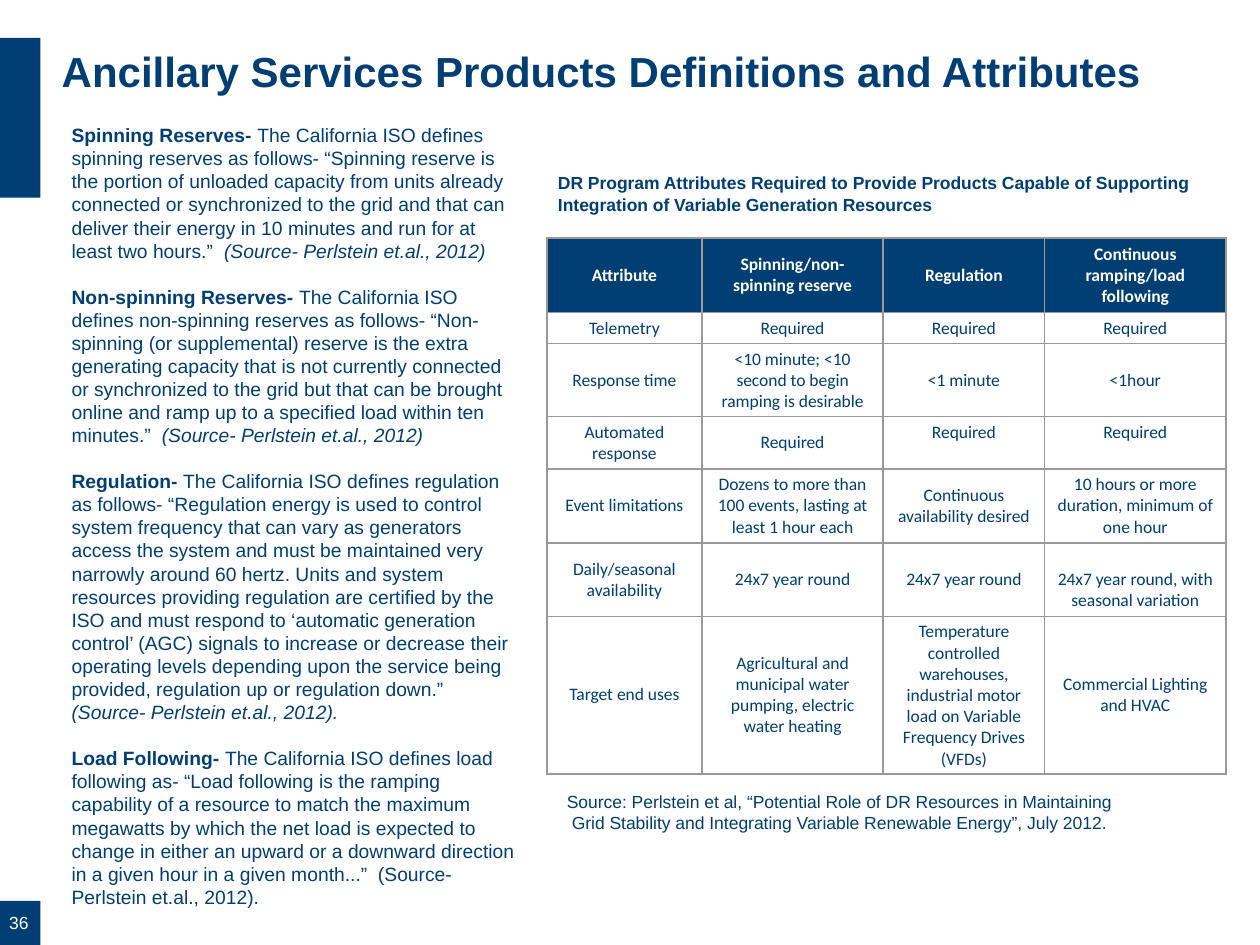
from dataclasses import dataclass

from lxml import etree
from pptx import Presentation
from pptx.dml.color import RGBColor
from pptx.enum.shapes import MSO_SHAPE as Shape
from pptx.enum.text import MSO_ANCHOR as Anchor, PP_ALIGN as Align
from pptx.oxml.ns import qn
from pptx.util import Inches, Pt


@dataclass(frozen=True)
class Theme:
    """Hold the colours, fonts and type sizes of the slide."""
    navy: str = "003E74"
    white: str = "FFFFFF"
    border: str = "999999"
    body_font: str = "Arial"
    table_font: str = "Calibri"
    title_size: int = 24
    body_size: int = 11
    small_size: int = 10


THEME = Theme()

DEFINITIONS = [
    [("Spinning Reserves- ", "bold"),
     ("The California ISO defines spinning reserves as follows- “Spinning reserve is the portion "
      "of unloaded capacity from units already connected or synchronized to the grid and that can "
      "deliver their energy in 10 minutes and run for at least two hours.”  ", ""),
     ("(Source- Perlstein et.al., 2012)", "italic")],
    [("Non-spinning Reserves- ", "bold"),
     ("The California ISO defines non-spinning reserves as follows- “Non-spinning (or "
      "supplemental) reserve is the extra generating capacity that is not currently connected or "
      "synchronized to the grid but that can be brought online and ramp up to a specified load "
      "within ten minutes.”  ", ""),
     ("(Source- Perlstein et.al., 2012)", "italic")],
    [("Regulation- ", "bold"),
     ("The California ISO defines regulation as follows- “Regulation energy is used to control "
      "system frequency that can vary as generators access the system and must be maintained very "
      "narrowly around 60 hertz. Units and system resources providing regulation are certified by "
      "the ISO and must respond to ‘automatic generation control’ (AGC) signals to increase or "
      "decrease their operating levels depending upon the service being provided, regulation up "
      "or regulation down.”  ", ""),
     ("(Source- Perlstein et.al., 2012).", "italic")],
    [("Load Following- ", "bold"),
     ("The California ISO defines load following as- “Load following is the ramping capability of "
      "a resource to match the maximum megawatts by which the net load is expected to change in "
      "either an upward or a downward direction in a given hour in a given month...”  "
      "(Source- Perlstein et.al., 2012).", "")],
]

ATTRIBUTES = [
    ["Attribute", "Spinning/non-spinning reserve", "Regulation",
     "Continuous ramping/load following"],
    ["Telemetry", "Required", "Required", "Required"],
    ["Response time", "<10 minute; <10 second to begin ramping is desirable", "<1 minute",
     "<1hour"],
    ["Automated response", "Required", "Required", "Required"],
    ["Event limitations", "Dozens to more than 100 events, lasting at least 1 hour each",
     "Continuous availability desired", "10 hours or more duration, minimum of one hour"],
    ["Daily/seasonal availability", "24x7 year round", "24x7 year round",
     "24x7 year round, with seasonal variation"],
    ["Target end uses", "Agricultural and municipal water pumping, electric water heating",
     "Temperature controlled warehouses, industrial motor load on Variable Frequency Drives "
     "(VFDs)", "Commercial Lighting and HVAC"],
]
COLUMN_WIDTHS = [1.23, 1.44, 1.28, 1.44]
ROW_HEIGHTS = [0.59, 0.24, 0.58, 0.41, 0.59, 0.58, 1.25]
CELL_ANCHORS = {(3, 2): Anchor.TOP, (3, 3): Anchor.TOP, (5, 3): Anchor.BOTTOM}


def add_span(para, text, size, style="", color=THEME.navy, font=THEME.body_font):
    """Append one styled run to a paragraph."""
    span = para.add_run()
    span.text = text
    span.font.name = font
    span.font.size = Pt(size)
    span.font.bold = style == "bold"
    span.font.italic = style == "italic"
    span.font.color.rgb = RGBColor.from_string(color)


def add_text(page, bounds, paragraphs, size, inset=True, wrap=True, gap=0, color=THEME.navy):
    """Add a text box whose paragraphs are lists of (text, style) runs."""
    box = page.shapes.add_textbox(*map(Inches, bounds))
    frame = box.text_frame
    frame.word_wrap = wrap
    if not inset:
        frame.margin_left = frame.margin_top = frame.margin_right = frame.margin_bottom = 0
    for index, spans in enumerate(paragraphs):
        para = frame.paragraphs[0] if index == 0 else frame.add_paragraph()
        if index:
            para.space_before = Pt(gap)
        for text, style in spans:
            add_span(para, text, size, style, color)
    return frame


def add_bar(page, top, height):
    """Add a navy bar on the left edge of the slide."""
    bar = page.shapes.add_shape(Shape.RECTANGLE, 0, Inches(top), Inches(0.32), Inches(height))
    bar.shadow.inherit = False
    bar.fill.solid()
    bar.fill.fore_color.rgb = RGBColor.from_string(THEME.navy)
    bar.line.fill.background()


def add_borders(cell):
    """Draw a thin grey line on the four sides of a cell."""
    properties = cell._tc.get_or_add_tcPr()
    for side in ("lnL", "lnR", "lnT", "lnB"):
        line = etree.SubElement(properties, qn(f"a:{side}"), w=str(Pt(1)))
        fill = etree.SubElement(line, qn("a:solidFill"))
        etree.SubElement(fill, qn("a:srgbClr"), val=THEME.border)


def fill_cell(cell, text, header, anchor):
    """Write and style one table cell."""
    add_borders(cell)
    if header:
        cell.fill.solid()
        cell.fill.fore_color.rgb = RGBColor.from_string(THEME.navy)
    else:
        cell.fill.background()
    cell.margin_left = cell.margin_right = Inches(0.08)
    cell.margin_top = cell.margin_bottom = Inches(0.04)
    cell.vertical_anchor = anchor
    para = cell.text_frame.paragraphs[0]
    para.alignment = Align.CENTER
    para.space_after = Pt(2 if header else 0)
    add_span(para, text, THEME.small_size, "bold" if header else "",
             THEME.white if header else THEME.navy, THEME.table_font)


def add_attribute_table(page):
    """Add the table of program attributes."""
    table = page.shapes.add_table(
        len(ROW_HEIGHTS), len(COLUMN_WIDTHS), Inches(4.34), Inches(1.89),
        Inches(sum(COLUMN_WIDTHS)), Inches(sum(ROW_HEIGHTS))).table
    table.horz_banding = False
    for column, width in zip(table.columns, COLUMN_WIDTHS):
        column.width = Inches(width)
    for row, height in zip(table.rows, ROW_HEIGHTS):
        row.height = Inches(height)
    for i, texts in enumerate(ATTRIBUTES):
        for j, text in enumerate(texts):
            fill_cell(table.cell(i, j), text, i == 0, CELL_ANCHORS.get((i, j), Anchor.MIDDLE))


def add_page_number(page):
    """Add the centred slide number over the lower bar."""
    frame = add_text(page, (0.04, 7.19, 0.22, 0.26), [[("36", "")]], THEME.small_size,
                     inset=False, color=THEME.white)
    frame.vertical_anchor = Anchor.MIDDLE
    frame.paragraphs[0].alignment = Align.CENTER


def add_source_note(page):
    """Add the source of the table with its second line slightly indented."""
    lines = ["Source: Perlstein et al, “Potential Role of DR Resources in Maintaining",
             "Grid Stability and Integrating Variable Renewable Energy”, July 2012."]
    frame = add_text(page, (4.4, 6.23, 4.6, 0.44), [[(line, "")] for line in lines],
                     THEME.small_size, wrap=False)
    frame.paragraphs[1]._p.get_or_add_pPr().set("marL", str(Inches(0.04)))


def main():
    """Build the slide and save it."""
    deck = Presentation()
    deck.slide_width, deck.slide_height = Inches(10), Inches(7.5)
    page = deck.slides.add_slide(deck.slide_layouts[6])
    add_bar(page, 0.3, 1.27)
    add_bar(page, 7.15, 0.35)
    add_page_number(page)
    add_text(page, (0.49, 0.36, 8.86, 0.51),
             [[("Ancillary Services Products Definitions and Attributes", "bold")]],
             THEME.title_size, inset=False)
    add_source_note(page)
    add_text(page, (0.47, 0.93, 3.74, 6.4), DEFINITIONS, THEME.body_size, gap=13)
    add_attribute_table(page)
    add_text(page, (4.33, 1.32, 5.39, 0.44),
             [[("DR Program Attributes Required to Provide Products Capable of Supporting "
                "Integration of Variable Generation Resources", "bold")]], THEME.small_size)
    deck.save("out.pptx")


if __name__ == "__main__":
    main()
